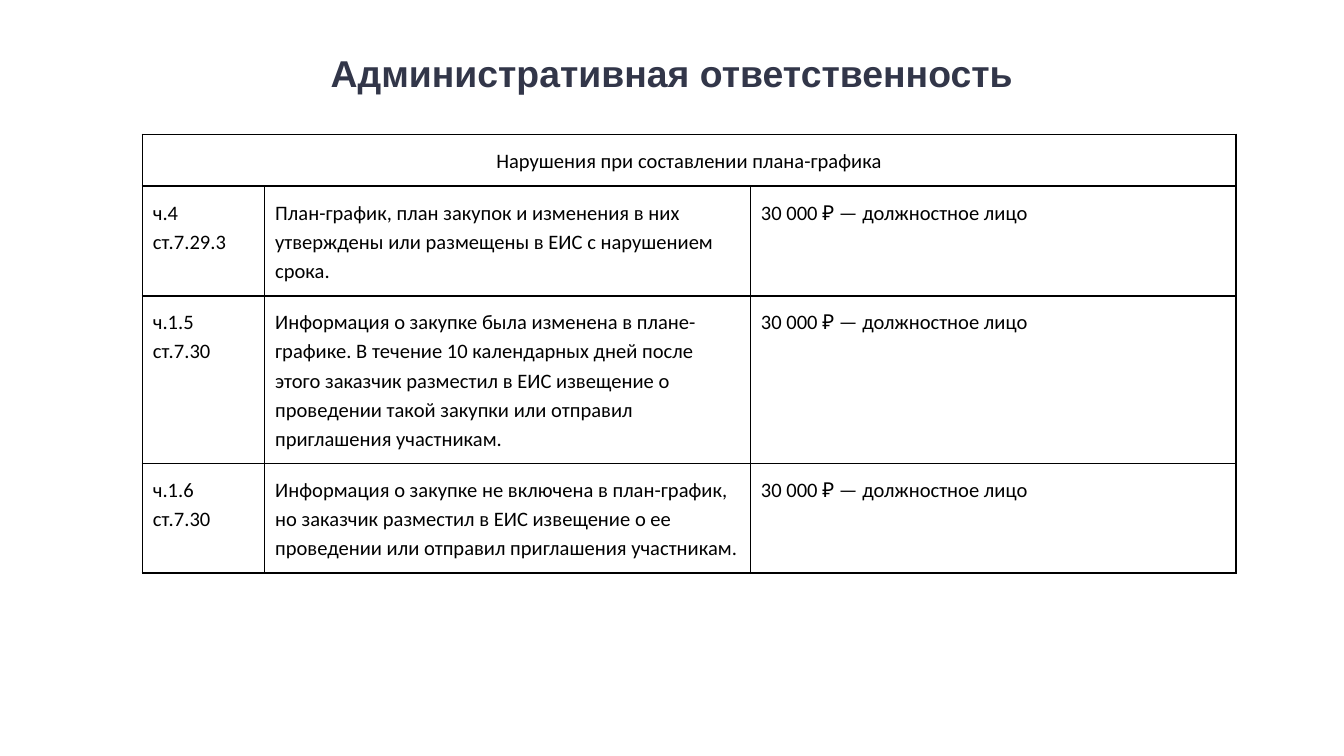
from lxml.etree import SubElement
from pptx import Presentation
from pptx.dml.color import RGBColor
from pptx.enum.text import MSO_ANCHOR, PP_ALIGN
from pptx.oxml.ns import qn
from pptx.util import Cm, Pt

COLORS = {"title": "323649", "text": "000000", "border": "000000"}
HEADING = "Нарушения при составлении плана-графика"
FINE = "30 000 ₽ — должностное лицо"
VIOLATIONS = [
    ("ч.4\nст.7.29.3",
     "План-график, план закупок и изменения в них утверждены "
     "или размещены в ЕИС с нарушением срока."),
    ("ч.1.5\nст.7.30",
     "Информация о закупке была изменена в плане-графике. "
     "В течение 10 календарных дней после этого заказчик разместил "
     "в ЕИС извещение о проведении такой закупки или отправил "
     "приглашения участникам."),
    ("ч.1.6\nст.7.30",
     "Информация о закупке не включена в план-график, "
     "но заказчик разместил в ЕИС извещение о ее проведении "
     "или отправил приглашения участникам."),
]
COLUMN_WIDTHS = [2.31, 9.18, 9.18]
ROW_HEIGHTS = [0.98, 2.07, 3.17, 2.07]
CELL_MARGIN = Cm(0.2)
CELL_SIZE = Pt(11)


def write(paragraph, text, font_name, size, color, bold=False):
    paragraph.text = text
    for run in paragraph.runs:
        run.font.name = font_name
        run.font.size = size
        run.font.bold = bold
        run.font.color.rgb = RGBColor.from_string(COLORS[color])
    for line_break in paragraph._p.findall(qn("a:br")):
        SubElement(line_break, qn("a:rPr"), sz=str(int(size.pt * 100)))


def add_title(slide, text):
    title = slide.shapes.add_textbox(Cm(1.27), Cm(0.58), Cm(22.86), Cm(1.57))
    frame = title.text_frame
    frame.word_wrap = True
    frame.vertical_anchor = MSO_ANCHOR.MIDDLE
    heading = frame.paragraphs[0]
    heading.alignment = PP_ALIGN.CENTER
    write(heading, text, "Arial", Pt(20), "title", bold=True)


def style_cell(cell):
    """Give the cell thin borders, no fill and equal margins."""
    properties = cell._tc.get_or_add_tcPr()
    for side in ("lnL", "lnR", "lnT", "lnB"):
        border = SubElement(properties, qn(f"a:{side}"), w=str(Pt(1)))
        fill = SubElement(border, qn("a:solidFill"))
        SubElement(fill, qn("a:srgbClr"), val=COLORS["border"])
    cell.fill.background()
    cell.margin_left = cell.margin_right = CELL_MARGIN
    cell.margin_top = cell.margin_bottom = CELL_MARGIN


def fill_cell(cell, text, alignment=PP_ALIGN.LEFT):
    paragraph = cell.text_frame.paragraphs[0]
    paragraph.alignment = alignment
    paragraph.line_spacing = 1.15
    write(paragraph, text, "Calibri", CELL_SIZE, "text")


def add_violations_table(slide):
    table = slide.shapes.add_table(
        len(ROW_HEIGHTS), len(COLUMN_WIDTHS), Cm(2.69), Cm(2.54),
        Cm(sum(COLUMN_WIDTHS)), Cm(sum(ROW_HEIGHTS))).table
    table.first_row = table.horz_banding = False
    for column, width in zip(table.columns, COLUMN_WIDTHS):
        column.width = Cm(width)
    for row, height in zip(table.rows, ROW_HEIGHTS):
        row.height = Cm(height)
    for cell in table.iter_cells():
        style_cell(cell)

    table.cell(0, 0).merge(table.cell(0, len(COLUMN_WIDTHS) - 1))
    fill_cell(table.cell(0, 0), HEADING, PP_ALIGN.CENTER)
    for row, (article, violation) in enumerate(VIOLATIONS, start=1):
        for column, text in enumerate((article, violation, FINE)):
            fill_cell(table.cell(row, column), text)


def main():
    presentation = Presentation()
    presentation.slide_width = Cm(25.4)
    presentation.slide_height = Cm(14.29)
    slide = presentation.slides.add_slide(presentation.slide_layouts[6])
    add_title(slide, "Административная ответственность")
    add_violations_table(slide)
    presentation.save("out.pptx")


if __name__ == "__main__":
    main()
